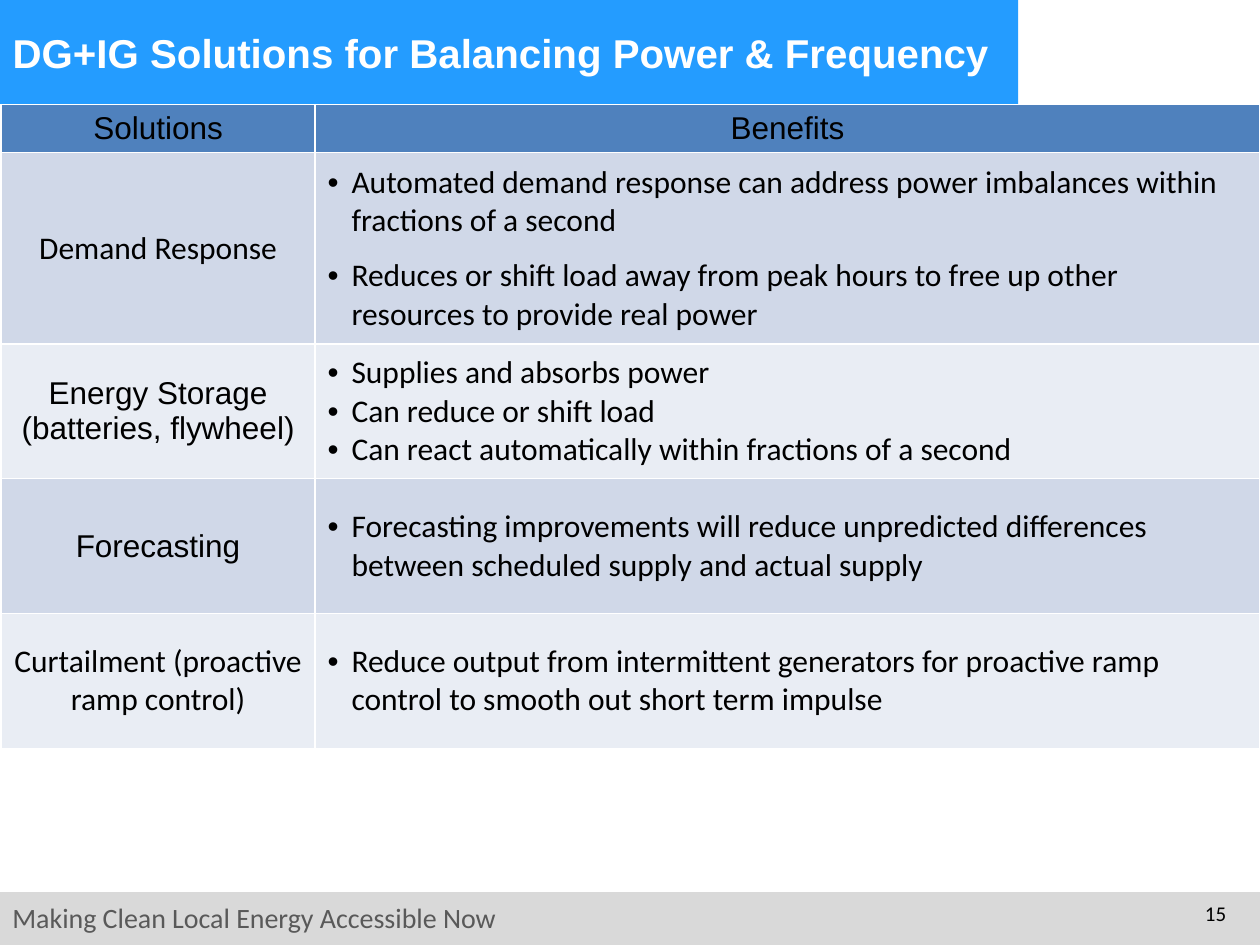
from dataclasses import dataclass

from lxml import etree
from pptx import Presentation
from pptx.dml.color import RGBColor
from pptx.enum.shapes import MSO_SHAPE
from pptx.enum.text import MSO_ANCHOR, MSO_AUTO_SIZE, PP_ALIGN
from pptx.oxml.ns import qn
from pptx.util import Inches, Pt

RECT = MSO_SHAPE.RECTANGLE
MIDDLE = MSO_ANCHOR.MIDDLE
FIXED = MSO_AUTO_SIZE.NONE
LEFT, CENTER, RIGHT = PP_ALIGN.LEFT, PP_ALIGN.CENTER, PP_ALIGN.RIGHT


@dataclass(frozen=True)
class Font:
    name: str
    size: float
    color: str
    bold: bool = False


@dataclass(frozen=True)
class Theme:
    title: Font = Font("Arial", 23, "FFFFFF", True)
    head: Font = Font("Arial", 18, "000000")
    body: Font = Font("Calibri", 18, "000000")
    foot: Font = Font("Calibri", 16, "595959")
    page: Font = Font("Calibri", 12, "000000")
    banner: str = "249CFF"
    strip: str = "D9D9D9"
    header: str = "4F81BD"
    bands: tuple[str, str] = ("D0D8E8", "E9EDF4")
    rule: str = "FFFFFF"
    rule_size: float = 1


@dataclass(frozen=True)
class Box:
    left: float
    top: float
    width: float
    height: float

    def lengths(self) -> list:
        return [Inches(v) for v in (self.left, self.top, self.width, self.height)]


@dataclass(frozen=True)
class Row:
    label: tuple[str, ...]
    font: Font
    points: tuple[str, ...]
    height: float = 1.07
    gap: float = 0


THEME = Theme()
HEADER_HEIGHT = 0.37
COLUMNS = (2.49, 7.5)
INDENT = 0.19

ROWS = (
    Row(("Demand Response",), THEME.body, (
        "Automated demand response can address power imbalances within fractions of a second",
        "Reduces or shift load away from peak hours to free up other resources to provide real power",
    ), 1.52, 9.5),
    Row(("Energy Storage", "(batteries, flywheel)"), THEME.head, (
        "Supplies and absorbs power",
        "Can reduce or shift load",
        "Can react automatically within fractions of a second",
    )),
    Row(("Forecasting",), THEME.head, (
        "Forecasting improvements will reduce unpredicted differences between scheduled supply and actual supply",
    )),
    Row(("Curtailment (proactive ramp control)",), THEME.body, (
        "Reduce output from intermittent generators for proactive ramp control to smooth out short term impulse",
    )),
)


def add_bullet(para) -> None:
    props = para._p.get_or_add_pPr()
    props.set("marL", str(Inches(INDENT)))
    props.set("indent", str(-Inches(INDENT)))
    etree.SubElement(props, qn("a:buFont"), typeface="Arial")
    etree.SubElement(props, qn("a:buChar"), char="•")


def write(frame, lines: tuple[str, ...], font: Font, align, bullet: bool = False, gap: float = 0) -> None:
    frame.word_wrap = True
    for index, line in enumerate(lines):
        para = frame.add_paragraph() if index else frame.paragraphs[0]
        if bullet:
            add_bullet(para)
        para.alignment = align
        if index and gap:
            para.space_before = Pt(gap)
        run = para.add_run()
        run.text = line
        run.font.name = font.name
        run.font.size = Pt(font.size)
        run.font.bold = font.bold
        run.font.color.rgb = RGBColor.from_string(font.color)


def add_bar(slide, box: Box, color: str) -> None:
    bar = slide.shapes.add_shape(RECT, *box.lengths())
    bar.shadow.inherit = False
    bar.fill.solid()
    bar.fill.fore_color.rgb = RGBColor.from_string(color)
    bar.line.fill.background()


def add_text(slide, box: Box, text: str, font: Font, align) -> None:
    label = slide.shapes.add_textbox(*box.lengths())
    write(label.text_frame, (text,), font, align)


def set_title(slide, box: Box, text: str) -> None:
    title = slide.shapes.title
    title.left, title.top, title.width, title.height = box.lengths()
    frame = title.text_frame
    frame.auto_size = FIXED
    frame.vertical_anchor = MIDDLE
    write(frame, (text,), THEME.title, LEFT)
    title.element.getparent().append(title.element)


def style_cell(cell, color: str) -> None:
    cell.vertical_anchor = MIDDLE
    props = cell._tc.get_or_add_tcPr()
    for side in ("lnL", "lnR", "lnT", "lnB"):
        line = etree.SubElement(props, qn(f"a:{side}"), w=str(Pt(THEME.rule_size)))
        fill = etree.SubElement(line, qn("a:solidFill"))
        etree.SubElement(fill, qn("a:srgbClr"), val=THEME.rule)
    cell.fill.solid()
    cell.fill.fore_color.rgb = RGBColor.from_string(color)


def add_grid(slide, left: float, top: float) -> None:
    heights = (HEADER_HEIGHT, *(row.height for row in ROWS))
    box = Box(left, top, sum(COLUMNS), sum(heights))
    table = slide.shapes.add_table(len(heights), len(COLUMNS), *box.lengths()).table
    for column, width in zip(table.columns, COLUMNS):
        column.width = Inches(width)
    for line, height in zip(table.rows, heights):
        line.height = Inches(height)
    for index, text in enumerate(("Solutions", "Benefits")):
        cell = table.cell(0, index)
        style_cell(cell, THEME.header)
        write(cell.text_frame, (text,), THEME.head, CENTER)
    for index, row in enumerate(ROWS):
        label, detail = table.cell(index + 1, 0), table.cell(index + 1, 1)
        for cell in (label, detail):
            style_cell(cell, THEME.bands[index % 2])
        write(label.text_frame, row.label, row.font, CENTER)
        write(detail.text_frame, row.points, THEME.body, LEFT, True, row.gap)


def main() -> None:
    deck = Presentation()
    deck.slide_width, deck.slide_height = Inches(10), Inches(7.5)
    slide = deck.slides.add_slide(deck.slide_layouts[5])
    add_bar(slide, Box(0, 7.08, 10, 0.42), THEME.strip)
    add_text(slide, Box(0, 7.1, 5.17, 0.37), "Making Clean Local Energy Accessible Now", THEME.foot, LEFT)
    add_bar(slide, Box(0, 0, 8.08, 0.83), THEME.banner)
    add_text(slide, Box(9.33, 7.1, 0.5, 0.4), "15", THEME.page, RIGHT)
    set_title(slide, Box(0, 0, 8.5, 0.83), "DG+IG Solutions for Balancing Power & Frequency")
    add_grid(slide, 0.01, 0.83)
    deck.save("out.pptx")


if __name__ == "__main__":
    main()
